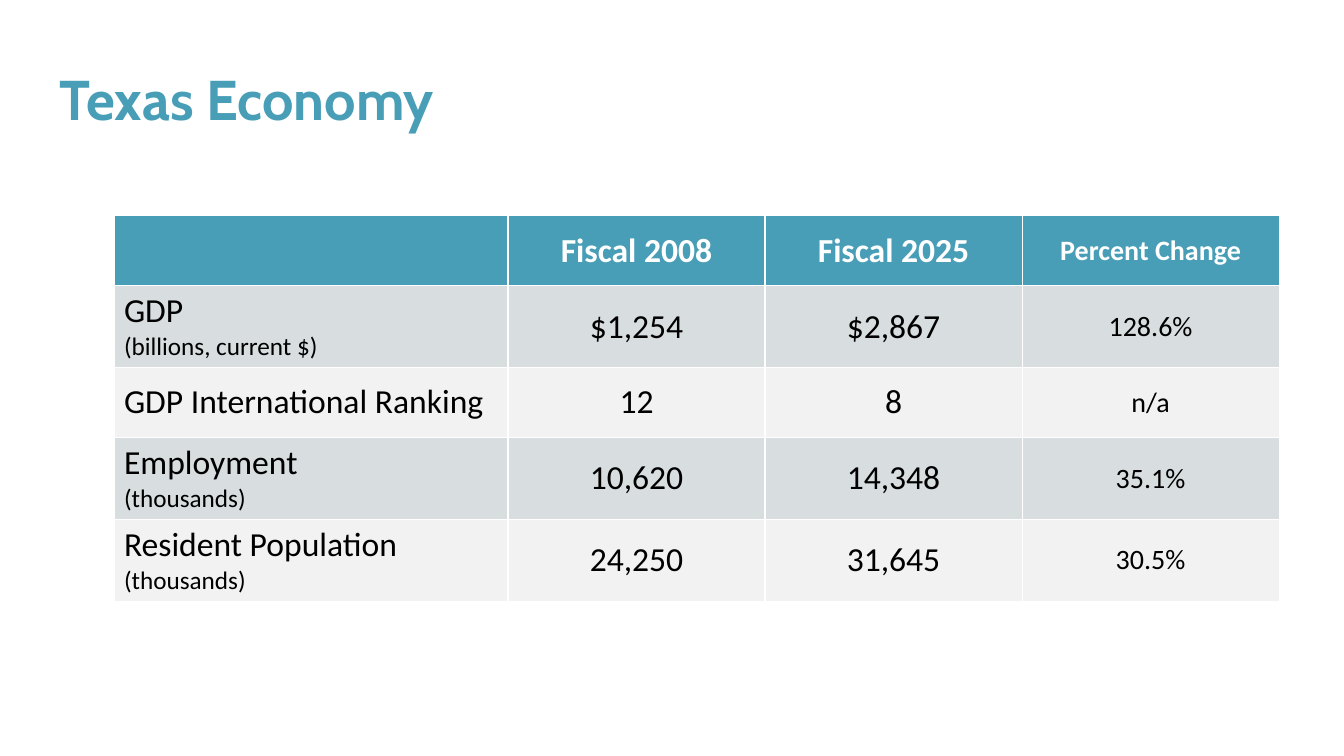
from pptx import Presentation
from pptx.dml.color import RGBColor
from pptx.enum.text import MSO_ANCHOR, MSO_AUTO_SIZE, PP_ALIGN
from pptx.util import Pt

COLORS = {"teal": "489EB6", "white": "FFFFFF", "black": "000000",
          "gray": "D8DDE0", "light": "F2F2F2"}
HEADER = ["", "Fiscal 2008", "Fiscal 2025", "Percent Change"]
ROWS = [
    ["GDP\n(billions, current $)", "$1,254", "$2,867", "128.6%"],
    ["GDP International Ranking", "12", "8", "n/a"],
    ["Employment\n(thousands)", "10,620", "14,348", "35.1%"],
    ["Resident Population\n(thousands)", "24,250", "31,645", "30.5%"],
]
COL_WIDTHS = [281.5, 183.6, 183.6, 183.6]
ROW_HEIGHT = 50


def rgb(name):
    return RGBColor.from_string(COLORS[name])


def write(p, text, font="Calibri", size=24, color="black", bold=False,
          align=PP_ALIGN.LEFT):
    p.alignment = align
    r = p.add_run()
    r.text = text
    r.font.name = font
    r.font.size = Pt(size)
    r.font.bold = bold
    r.font.color.rgb = rgb(color)


def add_title(s, text):
    sp = s.shapes.title
    sp.left, sp.top, sp.width, sp.height = Pt(35.3), Pt(33.8), Pt(924.5), Pt(60)
    tf = sp.text_frame
    tf.word_wrap = True
    tf.auto_size = MSO_AUTO_SIZE.NONE
    tf.vertical_anchor = MSO_ANCHOR.MIDDLE
    tf.margin_left = tf.margin_right = Pt(7.2)
    tf.margin_top = tf.margin_bottom = 0
    p = tf.paragraphs[0]
    p.line_spacing = 1.25
    write(p, text, font="Cabin", size=40, color="teal", bold=True)


def fill_cell(cell, text, fill, note_size=18, **fmt):
    cell.fill.solid()
    cell.fill.fore_color.rgb = rgb(fill)
    cell.vertical_anchor = MSO_ANCHOR.MIDDLE
    if not text:
        return
    label, *notes = text.split("\n")
    tf = cell.text_frame
    write(tf.paragraphs[0], label, **fmt)
    for note in notes:
        write(tf.add_paragraph(), note, **{**fmt, "size": note_size})


def add_data_table(s, rows):
    table = s.shapes.add_table(len(rows), len(COL_WIDTHS), Pt(81.4), Pt(154.1),
                               Pt(sum(COL_WIDTHS)), Pt(ROW_HEIGHT * len(rows))).table
    for column, width in zip(table.columns, COL_WIDTHS):
        column.width = Pt(width)
    for i, row in enumerate(rows):
        is_header = i == 0
        fill = "teal" if is_header else ("gray" if i % 2 else "light")
        for j, text in enumerate(row):
            fill_cell(table.cell(i, j), text, fill,
                      size=20 if j == len(row) - 1 else 24,
                      color="white" if is_header else "black",
                      bold=is_header,
                      align=PP_ALIGN.CENTER if j else PP_ALIGN.LEFT)


def main():
    """Build the Texas economy slide and save it."""
    prs = Presentation()
    prs.slide_width, prs.slide_height = Pt(960), Pt(540)
    s = prs.slides.add_slide(prs.slide_layouts[5])
    add_title(s, "Texas Economy")
    add_data_table(s, [HEADER] + ROWS)
    prs.save("out.pptx")


if __name__ == "__main__":
    main()
